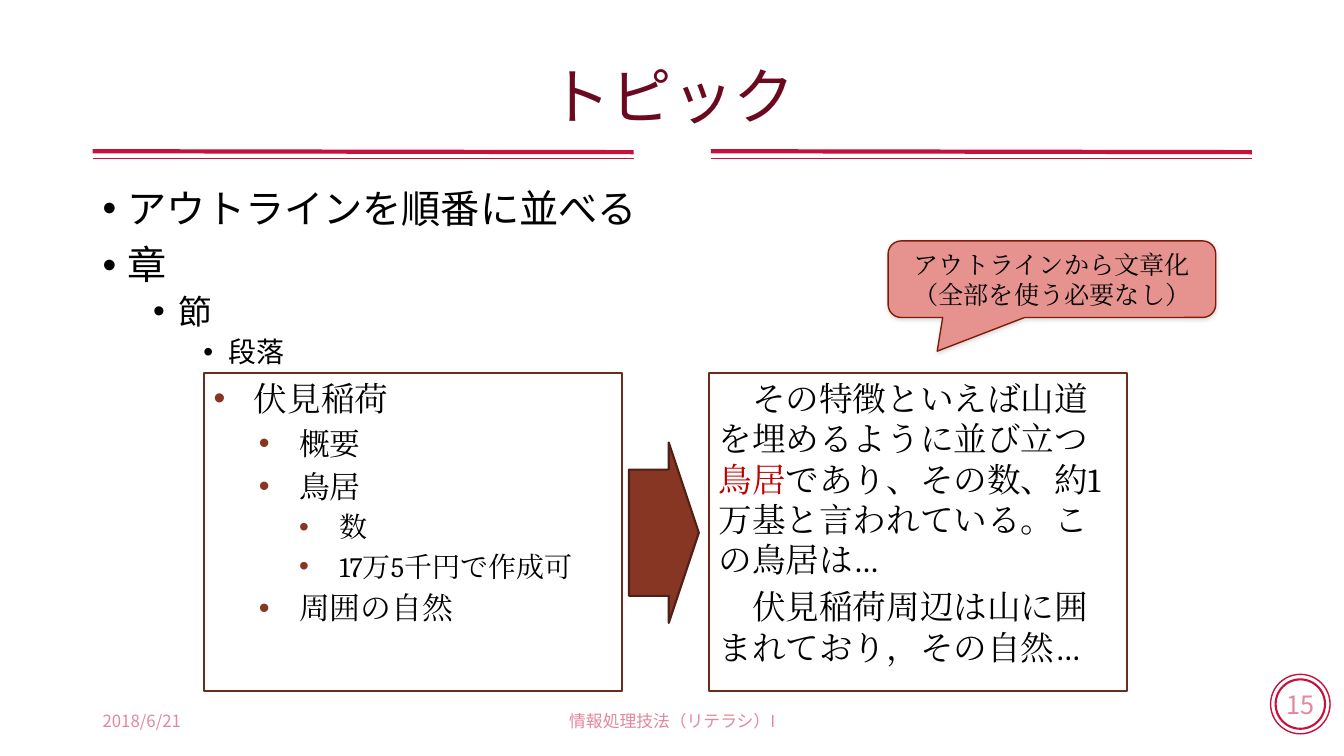
from dataclasses import dataclass

from lxml import etree
from pptx import Presentation
from pptx import util as u
from pptx.dml.color import RGBColor
from pptx.enum import shapes, text
from pptx.oxml.ns import qn

WIDE, HIGH = u.Inches(13.333), u.Inches(7.5)
SHAPE = shapes.MSO_SHAPE
MID, TOP = text.MSO_ANCHOR.MIDDLE, text.MSO_ANCHOR.TOP
LEFT, CENTER = text.PP_ALIGN.LEFT, text.PP_ALIGN.CENTER


@dataclass
class Theme:
    sans: str = "Noto Sans CJK JP"
    serif: str = "Cambria"
    ink: str = "000000"
    paper: str = "FFFFFF"
    rose: str = "C8103D"
    wine: str = "6B0920"
    rust: str = "873624"
    frame: str = "6B2B1D"
    edge: str = "4F2015"
    pink: str = "E6928F"
    brick: str = "821C08"
    red: str = "C00000"
    title: int = 44
    body: tuple = (28, 24, 20)
    topic: tuple = (24, 22, 20)
    note: int = 18
    small: int = 12


LOOK = Theme()


def place(x, y, w, h):
    return [int(v * side / 100) for v, side in zip((x, y, w, h), (WIDE, HIGH) * 2)]


def node(base, tag, **attrs):
    item = etree.SubElement(base, qn(tag))
    for key, value in attrs.items():
        item.set(key, str(value))
    return item


def style(part, size, face, color, fade=False):
    for run in part.runs:
        font = run.font
        font.size, font.name = u.Pt(size), face
        font.color.rgb = RGBColor.from_string(color)
        node(run._r.get_or_add_rPr(), "a:ea", typeface=face)
        if fade:
            fill = font.color._xFill
            node(fill[0], "a:alpha", val=50000)


def bullet(part, margin, hang, color):
    props = part._p.get_or_add_pPr()
    props.set("marL", str(u.Inches(margin)))
    props.set("indent", str(-u.Inches(hang)))
    node(node(props, "a:buClr"), "a:srgbClr", val=color)
    node(props, "a:buFont", typeface="Arial")
    node(props, "a:buChar", char="•")


def setup(shape, anchor=TOP, wrap=True):
    frame = shape.text_frame
    frame.word_wrap, frame.vertical_anchor = wrap, anchor
    return frame


def label(shape, words, size, face, color, align=CENTER, fade=False, wrap=True):
    frame = setup(shape, MID, wrap)
    frame.text = words
    for part in frame.paragraphs:
        part.alignment = align
        style(part, size, face, color, fade)
    return frame


def outline(shape, rows, sizes, face, margins, hang, color, gaps, lead=None):
    frame = setup(shape)
    frame.text = "\n".join(words for _, words in rows)
    for spot, (part, (level, _)) in enumerate(zip(frame.paragraphs, rows)):
        part.level, part.alignment = level, LEFT
        bullet(part, margins[level], hang, color)
        style(part, sizes[level], face, LOOK.ink)
        if lead:
            part.line_spacing = lead
        if spot:
            part.space_before = u.Pt(gaps[level])


def prose(shape, rows):
    frame = setup(shape)
    for spot, row in enumerate(rows):
        part = frame.add_paragraph() if spot else frame.paragraphs[0]
        part.alignment = LEFT
        if spot:
            part.space_before = u.Pt(LOOK.topic[0] * 0.2)
        for words in row:
            part.add_run().text = words
        style(part, LOOK.topic[0], LOOK.serif, LOOK.ink)
    key = frame.paragraphs[0].runs[1]
    key.font.color.rgb = RGBColor.from_string(LOOK.red)


def block(slide, kind, spot, fill, line, width, adjust=()):
    shape = slide.shapes.add_shape(kind, *place(*spot))
    shape.shadow.inherit = False
    if fill:
        shape.fill.solid()
        shape.fill.fore_color.rgb = RGBColor.from_string(fill)
    else:
        shape.fill.background()
    shape.line.color.rgb = RGBColor.from_string(line)
    shape.line.width = u.Pt(width)
    for index, value in enumerate(adjust):
        shape.adjustments[index] = value
    return shape


def box(slide, *spot):
    return slide.shapes.add_textbox(*place(*spot))


def rule(slide, x, y, drop, width):
    left, top, wide, fall = place(x, y, 40.25, drop)
    line = slide.shapes.add_connector(
        shapes.MSO_CONNECTOR.STRAIGHT, left, top, left + wide, top + fall)
    line.line.color.rgb = RGBColor.from_string(LOOK.rose)
    line.line.width = u.Pt(width)
    node(line._element.spPr, "a:effectLst")


def ring(slide, size, width):
    wide, high = size / 13.333 * 100, size / 7.5 * 100
    spot = 96.75 - wide / 2, 93.13 - high / 2, wide, high
    return block(slide, SHAPE.OVAL, spot, None, LOOK.rose, width)


def shade(shape):
    glow = node(shape._element.spPr.find(qn("a:effectLst")), "a:outerShdw",
                blurRad=u.Pt(3), dist=u.Pt(1), dir=5400000, rotWithShape=0)
    node(node(glow, "a:srgbClr", val=LOOK.ink), "a:alpha", val=15000)


def decor(slide):
    ring(slide, 0.59, 1)
    label(ring(slide, 0.49, 1.5), "15", LOOK.note, LOOK.sans, LOOK.rose,
          fade=True, wrap=False)
    for x in (52.9, 6.9):
        rule(slide, x, 20, 0.13, 3)
        rule(slide, x, 20.93, 0, 1)
    for x, wide, words, align in (
            (6.9, 22.5, "2018/6/21", LEFT),
            (33.15, 33.75, "情報処理技法（リテラシ）I", CENTER)):
        label(box(slide, x, 92.67, wide, 5.33), words, LOOK.small, LOOK.sans,
              LOOK.rose, align, fade=True)


def main():
    deck = Presentation()
    deck.slide_width, deck.slide_height = WIDE, HIGH
    slide = deck.slides.add_slide(deck.slide_layouts[6])
    decor(slide)

    title = label(box(slide, 6.9, 5.33, 86.25, 15.6), "トピック",
                  LOOK.title, LOOK.sans, LOOK.wine)
    title.paragraphs[0].line_spacing = 0.9

    outline(box(slide, 6.9, 24.4, 86.25, 65.73),
            [(0, "アウトラインを順番に並べる"), (0, "章"), (1, "節"), (2, "段落")],
            LOOK.body, LOOK.sans, (0.25, 0.75, 1.25), 0.25, LOOK.ink,
            (10, 5, 5), 0.9)

    plan, draft = (
        block(slide, SHAPE.RECTANGLE, (x, 49.33, 31.13, 42.13),
              LOOK.paper, LOOK.frame, 1.5) for x in (15.15, 52.73))
    outline(plan,
            [(0, "伏見稲荷"), (1, "概要"), (1, "鳥居"), (2, "数"),
             (2, "17万5千円で作成可"), (1, "周囲の自然")],
            LOOK.topic, LOOK.serif, (0.4, 0.85, 1.25), 0.4, LOOK.rust,
            [size * 0.2 for size in LOOK.topic])
    prose(draft, [
        ("　その特徴といえば山道を埋めるように並び立つ", "鳥居",
         "であり、その数、約1万基と言われている。この鳥居は…"),
        ("　伏見稲荷周辺は山に囲まれており，その自然…",)])

    block(slide, SHAPE.RIGHT_ARROW, (46.8, 58.53, 5.2, 23.87),
          LOOK.rust, LOOK.edge, 1.5, (0.7, 0.43))
    hint = block(slide, SHAPE.ROUNDED_RECTANGULAR_CALLOUT,
                 (66.08, 31.87, 24.38, 10.13),
                 LOOK.pink, LOOK.brick, 1, (-0.35, 0.94, 0.17))
    shade(hint)
    label(hint, "アウトラインから文章化\n（全部を使う必要なし）",
          LOOK.note, LOOK.serif, LOOK.ink)
    deck.save("out.pptx")


if __name__ == "__main__":
    main()
